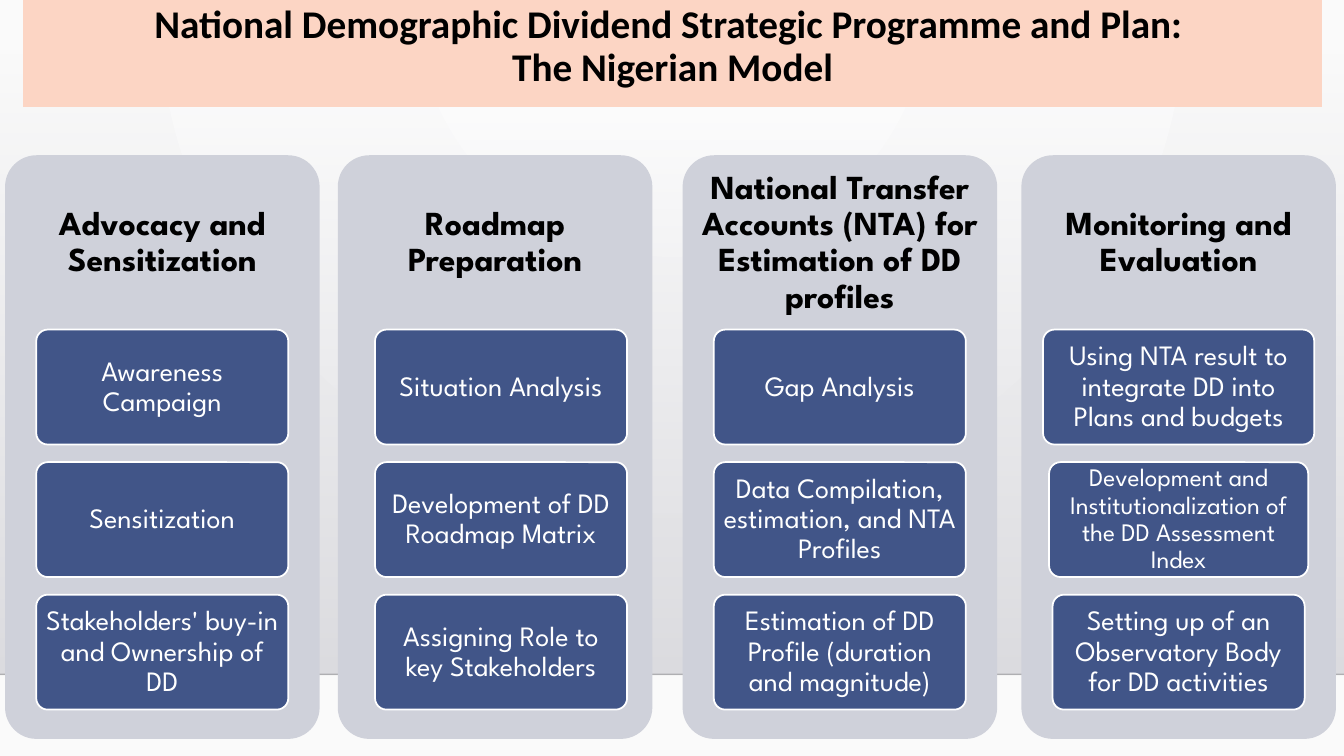
from dataclasses import dataclass

import lxml.etree
import pptx
import pptx.dml.color
import pptx.enum.shapes
import pptx.enum.text
import pptx.oxml.ns
import pptx.util

Inches = pptx.util.Inches
Pt = pptx.util.Pt
qn = pptx.oxml.ns.qn
Shapes = pptx.enum.shapes.MSO_SHAPE
Anchor = pptx.enum.text.MSO_ANCHOR

COLORS = {
    "white": "FFFFFF",
    "paper": "FAFAFA",
    "band_top": "DCDCE0",
    "band_bottom": "DEDEE2",
    "rule": "000001",
    "title_fill": "FCD5C4",
    "panel": "CFD1DA",
    "card": "415588",
    "black": "000000",
}
BODY_FONT = "League Spartan"

SLIDE_WIDTH = 13.33
HORIZON = 6.69
PANEL_TOP, PANEL_WIDTH, PANEL_HEIGHT = 1.54, 3.12, 5.79
HEADING_HEIGHT = 1.74
CARD_TOP, CARD_HEIGHT, CARD_PITCH = 3.27, 1.14, 1.315
FIRST_CENTER, COLUMN_PITCH = 1.61, 3.36


@dataclass
class Card:
    text: str
    width: float = 2.5
    size: int = 20


@dataclass
class Column:
    panel_left: float
    heading: str
    cards: list[Card]


COLUMNS = [
    Column(0.05, "Advocacy and Sensitization", [
        Card("Awareness Campaign"),
        Card("Sensitization"),
        Card("Stakeholders' buy-in and Ownership of DD"),
    ]),
    Column(3.35, "Roadmap Preparation", [
        Card("Situation Analysis"),
        Card("Development of DD Roadmap Matrix"),
        Card("Assigning Role to key Stakeholders"),
    ]),
    Column(6.77, "National Transfer Accounts (NTA) for Estimation of DD profiles", [
        Card("Gap Analysis"),
        Card("Data Compilation, estimation, and NTA Profiles"),
        Card("Estimation of DD Profile (duration and magnitude)"),
    ]),
    Column(10.13, "Monitoring and Evaluation", [
        Card("Using NTA result to integrate DD into Plans and budgets", width=2.69),
        Card("Development and Institutionalization of the DD Assessment Index",
             width=2.57, size=18),
        Card("Setting up of an Observatory Body for DD activities"),
    ]),
]


def rgb(name: str) -> pptx.dml.color.RGBColor:
    return pptx.dml.color.RGBColor.from_string(COLORS[name])


def set_alpha(container, percent: int) -> None:
    """Make the first colour inside an XML element partly transparent."""
    color = container.find(".//" + qn("a:srgbClr"))
    lxml.etree.SubElement(color, qn("a:alpha"), val=str(percent * 1000))


def set_gradient(fill, start: str, end: str) -> None:
    fill.gradient()
    for stop, name in zip(fill.gradient_stops, (start, end)):
        stop.color.rgb = rgb(name)


def add_box(slide, kind, left: float, top: float, width: float, height: float,
            fill: str, outline: str | None = None):
    shape = slide.shapes.add_shape(
        kind, Inches(left), Inches(top), Inches(width), Inches(height))
    shape.shadow.inherit = False
    shape.fill.solid()
    shape.fill.fore_color.rgb = rgb(fill)
    if outline:
        shape.line.color.rgb = rgb(outline)
        shape.line.width = Pt(1.25)
    else:
        shape.line.fill.background()
    if kind == Shapes.ROUNDED_RECTANGLE:
        shape.adjustments[0] = 0.1
    return shape


def write_text(shape, text: str, *, size: int, color: str, font: str = BODY_FONT,
               bold: bool = False, anchor=Anchor.MIDDLE,
               inset_x: float = 0.1, inset_y: float = 0.1) -> None:
    frame = shape.text_frame
    frame.word_wrap = True
    frame.vertical_anchor = anchor
    frame.margin_left = frame.margin_right = Inches(inset_x)
    frame.margin_top = frame.margin_bottom = Inches(inset_y)
    paragraph = frame.paragraphs[0]
    paragraph.text = text
    paragraph.alignment = pptx.enum.text.PP_ALIGN.CENTER
    paragraph.line_spacing = 0.9
    for run in paragraph.runs:
        run.font.name = font
        run.font.size = Pt(size)
        run.font.bold = bold
        run.font.color.rgb = rgb(color)


def paint_background(slide) -> None:
    """Radial page tint, grey band fading upwards and the horizon line."""
    set_gradient(slide.background.fill, "white", "paper")
    gradient = slide.element.find(".//" + qn("a:gradFill"))
    gradient.remove(gradient.find(qn("a:lin")))
    radial = lxml.etree.SubElement(gradient, qn("a:path"), path="circle")
    lxml.etree.SubElement(radial, qn("a:fillToRect"),
                          l="43000", t="0", r="43000", b="100000")

    band = add_box(slide, Shapes.RECTANGLE, 0, 0.51, SLIDE_WIDTH, HORIZON - 0.51, "band_top")
    set_gradient(band.fill, "band_top", "band_bottom")
    band.fill.gradient_angle = 270
    set_alpha(band.element.spPr, 0)

    horizon = slide.shapes.add_connector(
        pptx.enum.shapes.MSO_CONNECTOR.STRAIGHT,
        Inches(0), Inches(HORIZON), Inches(SLIDE_WIDTH), Inches(HORIZON))
    horizon.line.color.rgb = rgb("rule")
    horizon.line.width = Pt(1)
    set_alpha(horizon.element.spPr, 20)
    lxml.etree.SubElement(horizon.element.spPr, qn("a:effectLst"))


def add_column(slide, column: Column, center: float) -> None:
    add_box(slide, Shapes.ROUNDED_RECTANGLE, column.panel_left, PANEL_TOP,
            PANEL_WIDTH, PANEL_HEIGHT, "panel")
    heading = slide.shapes.add_textbox(
        Inches(column.panel_left), Inches(PANEL_TOP),
        Inches(PANEL_WIDTH), Inches(HEADING_HEIGHT))
    write_text(heading, column.heading, size=24, color="black", bold=True)
    for row, card in enumerate(column.cards):
        box = add_box(slide, Shapes.ROUNDED_RECTANGLE, center - card.width / 2,
                      CARD_TOP + row * CARD_PITCH, card.width, CARD_HEIGHT,
                      "card", outline="white")
        write_text(box, card.text, size=card.size, color="white",
                   inset_x=0.06, inset_y=0.04)


def main() -> None:
    presentation = pptx.Presentation()
    presentation.slide_width = Inches(SLIDE_WIDTH)
    presentation.slide_height = Inches(7.5)
    slide = presentation.slides.add_slide(presentation.slide_layouts[6])
    paint_background(slide)

    title = add_box(slide, Shapes.RECTANGLE, 0.23, 0, 12.88, 1.06, "title_fill")
    write_text(title,
               "National Demographic Dividend Strategic Programme and Plan: \n"
               "The Nigerian Model",
               size=28, color="black", font="Calibri", bold=True,
               anchor=Anchor.TOP, inset_y=0.05)

    for index, column in enumerate(COLUMNS):
        add_column(slide, column, FIRST_CENTER + index * COLUMN_PITCH)
    presentation.save("out.pptx")


if __name__ == "__main__":
    main()
